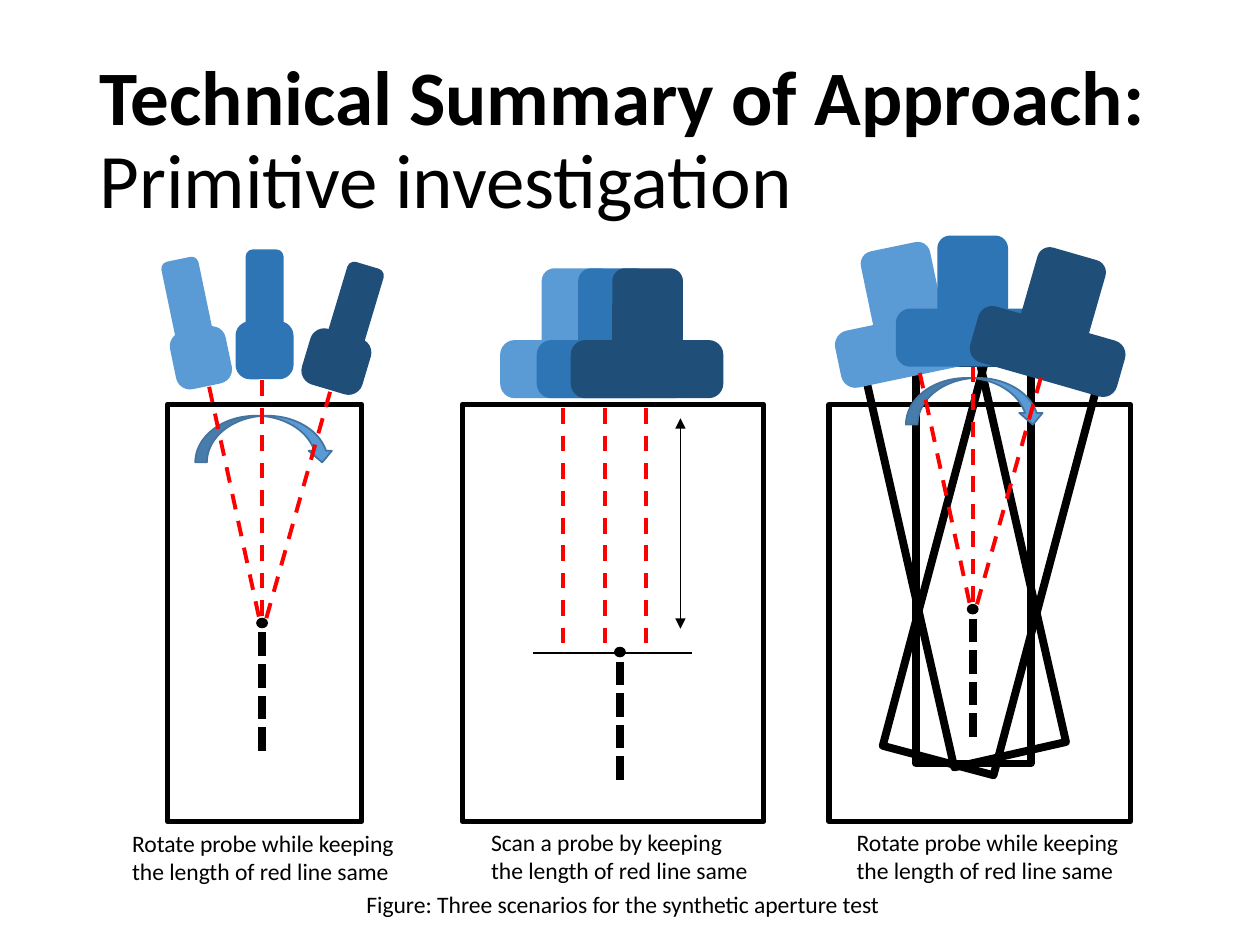
import pptx
import pptx.dml.color
import pptx.enum.dml
import pptx.enum.shapes
import pptx.enum.text
import pptx.oxml.ns
import pptx.oxml.xmlchemy
import pptx.util

Inches = pptx.util.Inches
Pt = pptx.util.Pt
SHAPE = pptx.enum.shapes.MSO_SHAPE
DASH = pptx.enum.dml.MSO_LINE
ANCHOR = pptx.enum.text.MSO_ANCHOR
ALIGN = pptx.enum.text.PP_ALIGN
AUTO_SIZE = pptx.enum.text.MSO_AUTO_SIZE

FONT = "Calibri"
BLACK, RED, WHITE = "000000", "FF0000", "FFFFFF"
LIGHT, MID, DARK, ARROW_EDGE = "5B9BD5", "2E75B6", "1F4E79", "43739E"

TITLE = [("Technical Summary of Approach:", True), ("Primitive investigation", False)]
ROTATE = ["Rotate probe while keeping", "the length of red line same"]
SCAN = ["Scan a probe by keeping", "the length of red line same"]
CAPTIONS = [
    (0.95, 6.53, 2.35, 0.56, ROTATE),
    (3.8, 6.52, 2.27, 0.56, SCAN),
    (6.7, 6.52, 2.35, 0.56, ROTATE),
    (2.81, 7.01, 4.34, 0.33, ["Figure: Three scenarios for the synthetic aperture test"]),
]

TANKS = [(1.33, 1.54), (3.67, 2.39), (6.58, 2.39)]
TILTED_BEAMS = [(7.21, 2.85, -12.8), (7.27, 2.88, 0), (7.4, 2.91, 14.9)]

NARROW_PROBES = [
    (LIGHT, -11.8, (1.38, 2.62, 0.43), (1.36, 2.06, 0.28)),
    (MID, 0, (1.88, 2.56, 0.44), (1.96, 1.99, 0.28)),
    (DARK, 16.7, (2.43, 2.65, 0.48), (2.66, 2.1, 0.28)),
]
SCANNED_PROBES = [
    (color, 0, (x, 2.71, 1.19), (x + 0.33, 2.14, 0.54))
    for color, x in [(LIGHT, 3.98), (MID, 4.27), (DARK, 4.54)]
]
WIDE_PROBES = [
    (LIGHT, -11.8, (6.65, 2.53, 1.19), (6.9, 1.96, 0.54)),
    (MID, 0, (7.12, 2.46, 1.19), (7.45, 1.88, 0.54)),
    (DARK, 16, (7.72, 2.57, 1.19), (8.15, 2.01, 0.54)),
]

ROTATION_ARROWS = [(1.55, 3.3), (7.19, 3)]
FAN_TARGETS = [(2.08, 4.95), (7.72, 4.84)]
SCAN_TARGET = (4.92, 5.18)
FAN_RAYS = [(0.54, -1.84, 0.03, -0.03), (0, -1.93, 0, -0.04), (-0.42, -1.88, -0.02, -0.03)]
SCAN_RAYS = [4.47, 4.8, 5.13]


def rgb(color):
    return pptx.dml.color.RGBColor.from_string(color)


def add_shape(shapes, kind, box, fill, line, width, rot=0):
    sp = shapes.add_shape(kind, *map(Inches, box))
    sp.shadow.inherit = False
    sp.rotation = rot
    if fill:
        sp.fill.solid()
        sp.fill.fore_color.rgb = rgb(fill)
    else:
        sp.fill.background()
    sp.line.color.rgb = rgb(line)
    sp.line.width = Pt(width)
    return sp


def add_line(shapes, start, end, color, width, dash=None, arrows=False):
    line = shapes.add_connector(
        pptx.enum.shapes.MSO_CONNECTOR.STRAIGHT, *map(Inches, (*start, *end)))
    line.line.color.rgb = rgb(color)
    line.line.width = Pt(width)
    if dash:
        line.line.dash_style = dash
    sp_pr = line._element.find(pptx.oxml.ns.qn("p:spPr"))
    if arrows:
        ln = sp_pr.find(pptx.oxml.ns.qn("a:ln"))
        for tag in ("a:headEnd", "a:tailEnd"):
            end_mark = pptx.oxml.xmlchemy.OxmlElement(tag)
            end_mark.set("type", "triangle")
            ln.append(end_mark)
    sp_pr.append(pptx.oxml.xmlchemy.OxmlElement("a:effectLst"))


def add_probe(shapes, color, rot, head, handle):
    group = shapes.add_group_shape().shapes
    sp = add_shape(group, SHAPE.ROUNDED_RECTANGLE, (*head, 0.44), color, color, 1.5, rot)
    sp.adjustments[0] = 0.238
    add_shape(group, SHAPE.ROUNDED_RECTANGLE, (*handle, 0.79), color, color, 1.5, rot)


def add_target(shapes, x, y):
    add_shape(shapes, SHAPE.OVAL, (x - 0.04, y - 0.04, 0.08, 0.07), BLACK, BLACK, 1)
    add_line(shapes, (x, y + 0.07), (x, y + 1.02), BLACK, 4.5, DASH.SQUARE_DOT)


def add_run(p, text, size, bold=False):
    r = p.add_run()
    r.text = text
    r.font.name = FONT
    r.font.size = Pt(size)
    r.font.bold = bold
    r.font.color.rgb = rgb(BLACK)


def add_caption(shapes, x, y, w, h, lines):
    tf = shapes.add_textbox(*map(Inches, (x, y, w, h))).text_frame
    tf.word_wrap = False
    tf.auto_size = AUTO_SIZE.SHAPE_TO_FIT_TEXT
    for i, text in enumerate(lines):
        p = tf.add_paragraph() if i else tf.paragraphs[0]
        add_run(p, text, 13.5)


def set_title(title):
    title.left, title.top, title.width, title.height = map(Inches, (0.69, 0.4, 8.62, 1.45))
    tf = title.text_frame
    tf.auto_size = AUTO_SIZE.NONE
    tf.vertical_anchor = ANCHOR.MIDDLE
    p = tf.paragraphs[0]
    p.alignment = ALIGN.LEFT
    p.line_spacing = 0.9
    for i, (text, bold) in enumerate(TITLE):
        if i:
            p.add_line_break()
        add_run(p, text, 44, bold)


def main():
    prs = pptx.Presentation()
    prs.slide_width, prs.slide_height = Inches(10), Inches(7.5)
    s = prs.slides.add_slide(prs.slide_layouts[5])
    shapes = s.shapes
    set_title(shapes.title)

    for x, w in TANKS:
        add_shape(shapes, SHAPE.RECTANGLE, (x, 3.21, w, 3.31), WHITE, BLACK, 3)
    for x, y, rot in TILTED_BEAMS:
        add_shape(shapes, SHAPE.RECTANGLE, (x, y, 0.91, 3.18), None, BLACK, 4.5, rot)
    for probe in NARROW_PROBES + SCANNED_PROBES + WIDE_PROBES:
        add_probe(shapes, *probe)
    for x, y in ROTATION_ARROWS:
        add_shape(shapes, SHAPE.CURVED_DOWN_ARROW, (x, y, 1.1, 0.37), LIGHT, ARROW_EDGE, 1)
    for x, y in FAN_TARGETS + [SCAN_TARGET]:
        add_target(shapes, x, y)

    for x, y in FAN_TARGETS:
        for x1, y1, x2, y2 in FAN_RAYS:
            add_line(shapes, (x + x1, y + y1), (x + x2, y + y2), RED, 2.25, DASH.DASH)
    for x in SCAN_RAYS:
        add_line(shapes, (x, 3.24), (x, 5.13), RED, 2.25, DASH.DASH)
    add_line(shapes, (4.23, 5.18), (5.49, 5.18), BLACK, 1)
    add_line(shapes, (5.4, 3.32), (5.4, 4.99), BLACK, 1, arrows=True)

    for caption in CAPTIONS:
        add_caption(shapes, *caption)
    prs.save("out.pptx")


if __name__ == "__main__":
    main()
